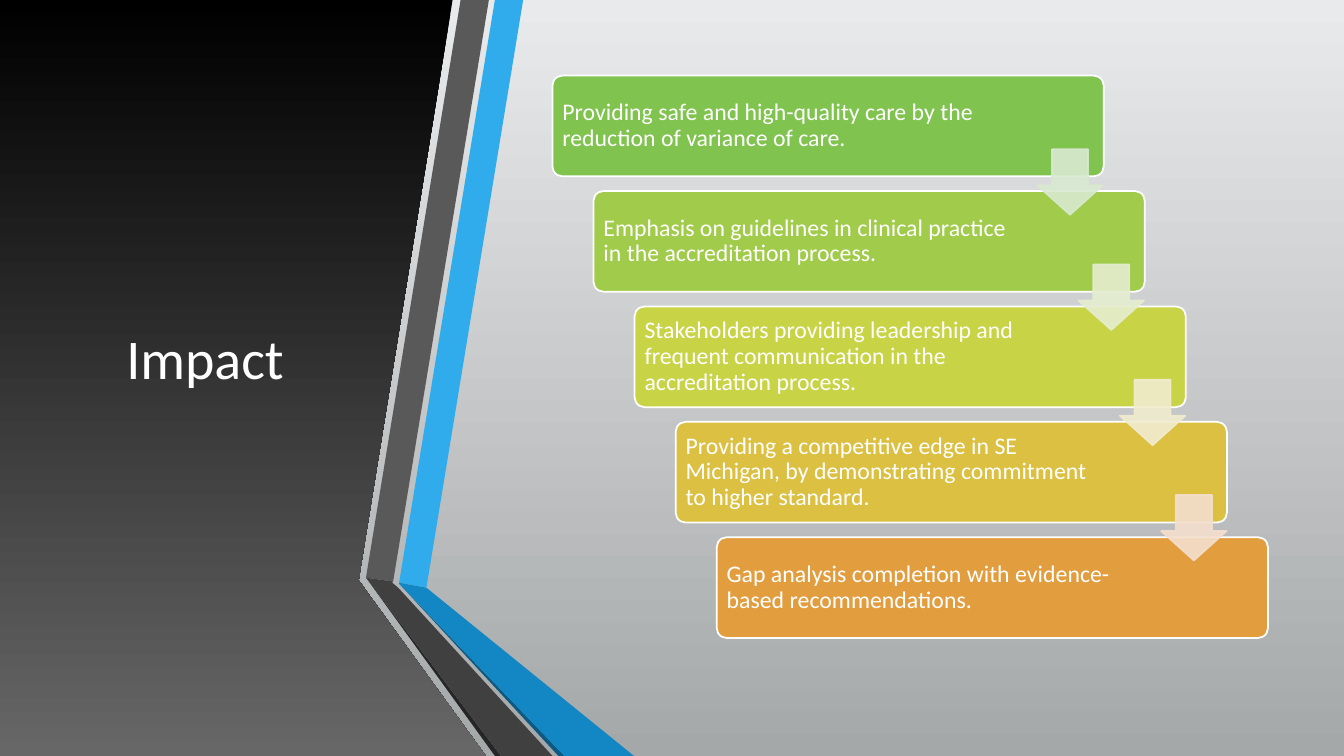
from dataclasses import dataclass

from lxml import etree
from pptx import Presentation
from pptx.dml.color import RGBColor
from pptx.enum.shapes import MSO_SHAPE
from pptx.enum.text import MSO_ANCHOR, MSO_AUTO_SIZE, PP_ALIGN
from pptx.oxml.ns import qn
from pptx.util import Pt

RECT = MSO_SHAPE.RECTANGLE
ROUND_RECT = MSO_SHAPE.ROUNDED_RECTANGLE
DOWN_ARROW = MSO_SHAPE.DOWN_ARROW
MIDDLE = MSO_ANCHOR.MIDDLE
NO_AUTOFIT = MSO_AUTO_SIZE.NONE
LEFT, CENTER = PP_ALIGN.LEFT, PP_ALIGN.CENTER

WHITE = RGBColor(0xFF, 0xFF, 0xFF)
BLACK = RGBColor(0x00, 0x00, 0x00)
PANEL_GRAY = RGBColor(0x67, 0x67, 0x67)
PALE_GRAY = RGBColor(0xE9, 0xEA, 0xEB)
MID_GRAY = RGBColor(0xA5, 0xA8, 0xA9)
BLUE = RGBColor(0x30, 0xAC, 0xEC)
DEEP_BLUE = RGBColor(0x12, 0x87, 0xC3)
NAVY = RGBColor(0x0C, 0x5A, 0x82)
GRAY = RGBColor(0x59, 0x59, 0x59)
DARK_GRAY = RGBColor(0x40, 0x40, 0x40)
NEAR_BLACK = RGBColor(0x26, 0x26, 0x26)
GREEN = RGBColor(0x80, 0xC3, 0x4F)
LIME = RGBColor(0xA1, 0xCB, 0x4A)
YELLOW_GREEN = RGBColor(0xC8, 0xD3, 0x46)
GOLD = RGBColor(0xDB, 0xC0, 0x42)
ORANGE = RGBColor(0xE2, 0x9D, 0x3E)
PALE_GREEN = RGBColor(0xD8, 0xE9, 0xD0)
PALE_LIME = RGBColor(0xE5, 0xED, 0xCF)
PALE_YELLOW = RGBColor(0xF1, 0xEC, 0xCF)
PALE_ORANGE = RGBColor(0xF4, 0xDF, 0xCE)

FONT = "Calibri"
SLIDE_W, SLIDE_H = 960, 540
STEP_LEFT, STEP_TOP, STEP_W, STEP_H = 394.6, 54, 393.8, 72
STEP_DX, STEP_DY = 29.34, 82.44
TEXT_INSET = 2.1
ARROW_LEFT, ARROW_TOP, ARROW_SIZE = 740.9, 106.6, 46.8
ARROW_DX, ARROW_DY = 29.5, 82.3
STEP_FRAME = {"word_wrap": True, "vertical_anchor": MIDDLE,
              "margin_left": Pt(5), "margin_right": Pt(5),
              "margin_top": Pt(5), "margin_bottom": Pt(5)}
TITLE_FRAME = {"word_wrap": True, "vertical_anchor": MIDDLE,
               "auto_size": NO_AUTOFIT}
STEP_PARAGRAPH = {"alignment": LEFT, "line_spacing": 0.9,
                  "space_after": Pt(6)}


@dataclass
class Outline:
    color: RGBColor
    points: list[tuple[float, float]]


@dataclass
class Step:
    text: str
    color: RGBColor
    text_width: float = 313.2
    arrow_color: RGBColor | None = None


PANEL = [(0, 0), (323.3, 0), (256.3, 414), (256.3, 414.7),
         (347, SLIDE_H), (0, SLIDE_H)]

RIBBONS = [
    Outline(BLUE, [(285.1, 416.2), (304.6, 419.8), (373.7, 0), (353.5, 0)]),
    Outline(GRAY, [(349.2, 0), (329, 0), (261.4, 412.6), (280.8, 415.4)]),
    Outline(NEAR_BLACK, [(261.4, 412.6), (353.5, SLIDE_H), (357.8, SLIDE_H)]),
    Outline(NAVY, [(285.1, 416.9), (398.9, SLIDE_H), (403.2, SLIDE_H)]),
    Outline(DEEP_BLUE, [(285.1, 416.9), (403.2, SLIDE_H), (452.9, SLIDE_H),
                        (304.6, 419.8), (285.1, 416.2)]),
    Outline(DARK_GRAY, [(394.6, SLIDE_H), (284.4, 419.8), (280.1, 416.2),
                        (280.8, 415.4), (261.4, 412.6), (357.8, SLIDE_H)]),
]

STEPS = [
    Step("Providing safe and high-quality care by the reduction of variance "
         "of care.", GREEN, 307.4, PALE_GREEN),
    Step("Emphasis on guidelines in clinical practice in the accreditation "
         "process.", LIME, arrow_color=PALE_LIME),
    Step("Stakeholders providing leadership and frequent communication in "
         "the accreditation process.", YELLOW_GREEN, arrow_color=PALE_YELLOW),
    Step("Providing a competitive edge in SE Michigan, by demonstrating "
         "commitment to higher standard.", GOLD, arrow_color=PALE_ORANGE),
    Step("Gap analysis completion with evidence-based recommendations.",
         ORANGE),
]


def apply(target, values: dict) -> None:
    for name, value in values.items():
        setattr(target, name, value)


def fill_gradient(fill, top: RGBColor, bottom: RGBColor) -> None:
    fill.gradient()
    fill.gradient_angle = 270
    for stop, color in zip(fill.gradient_stops, (top, bottom)):
        stop.color.rgb = color


def fill_solid(fill, color: RGBColor) -> None:
    fill.solid()
    fill.fore_color.rgb = color


def add_outline(shapes, points: list[tuple[float, float]]):
    start, *rest = [(Pt(x), Pt(y)) for x, y in points]
    builder = shapes.build_freeform(*start)
    builder.add_line_segments(rest, close=True)
    sp = builder.convert_to_shape()
    sp.shadow.inherit = False
    sp.line.fill.background()
    return sp


def add_preset(shapes, kind, left: float, top: float, width: float,
               height: float, color: RGBColor, line: RGBColor,
               adjustments: tuple[float, ...]):
    sp = shapes.add_shape(kind, Pt(left), Pt(top), Pt(width), Pt(height))
    sp.shadow.inherit = False
    fill_solid(sp.fill, color)
    fill_solid(sp.line.fill, line)
    sp.line.width = Pt(1.25)
    for i, value in enumerate(adjustments):
        sp.adjustments[i] = value
    return sp


def write(tf, text: str, size: float, frame: dict, paragraph: dict) -> None:
    apply(tf, frame)
    p = tf.paragraphs[0]
    apply(p, paragraph)
    r = p.add_run()
    r.text = text
    apply(r.font, {"name": FONT, "size": Pt(size)})
    r.font.color.rgb = WHITE


def add_step(shapes, index: int, step: Step) -> None:
    left = STEP_LEFT + index * STEP_DX
    top = STEP_TOP + index * STEP_DY
    add_preset(shapes, ROUND_RECT, left, top, STEP_W, STEP_H,
               step.color, WHITE, (0.1,))
    box = shapes.add_textbox(Pt(left + TEXT_INSET), Pt(top + TEXT_INSET),
                             Pt(step.text_width), Pt(STEP_H - 2 * TEXT_INSET))
    write(box.text_frame, step.text, 17, STEP_FRAME, STEP_PARAGRAPH)


def add_arrow(shapes, index: int, color: RGBColor) -> None:
    sp = add_preset(shapes, DOWN_ARROW, ARROW_LEFT + index * ARROW_DX,
                    ARROW_TOP + index * ARROW_DY, ARROW_SIZE, ARROW_SIZE,
                    color, color, (0.55, 0.45))
    # The preset stores the head length first and the stem width second.
    apply_alpha = sp.element.spPr.iter(qn("a:srgbClr"))
    for clr in list(apply_alpha):
        etree.SubElement(clr, qn("a:alpha")).set("val", "90000")
    sp.adjustments[0], sp.adjustments[1] = 0.55, 0.45


def main() -> None:
    prs = Presentation()
    prs.slide_width, prs.slide_height = Pt(SLIDE_W), Pt(SLIDE_H)
    s = prs.slides.add_slide(prs.slide_layouts[5])
    fill_gradient(s.background.fill, PALE_GRAY, MID_GRAY)

    backdrop = s.shapes.add_shape(RECT, 0, 0, Pt(SLIDE_W), Pt(SLIDE_H))
    backdrop.shadow.inherit = False
    backdrop.line.fill.background()
    fill_gradient(backdrop.fill, PALE_GRAY, MID_GRAY)
    fill_gradient(add_outline(s.shapes, PANEL).fill, BLACK, PANEL_GRAY)

    title = s.shapes.title
    apply(title, {"left": Pt(42.5), "top": Pt(54),
                  "width": Pt(208), "height": Pt(402)})
    write(title.text_frame, "Impact", 40, TITLE_FRAME, {"alignment": CENTER})
    title.element.getparent().append(title.element)

    ribbons = s.shapes.add_group_shape().shapes
    for ribbon in RIBBONS:
        fill_solid(add_outline(ribbons, ribbon.points).fill, ribbon.color)

    staircase = s.shapes.add_group_shape().shapes
    for i, step in enumerate(STEPS):
        add_step(staircase, i, step)
    for i, step in enumerate(STEPS):
        if step.arrow_color is not None:
            add_arrow(staircase, i, step.arrow_color)

    prs.save("out.pptx")


if __name__ == "__main__":
    main()
